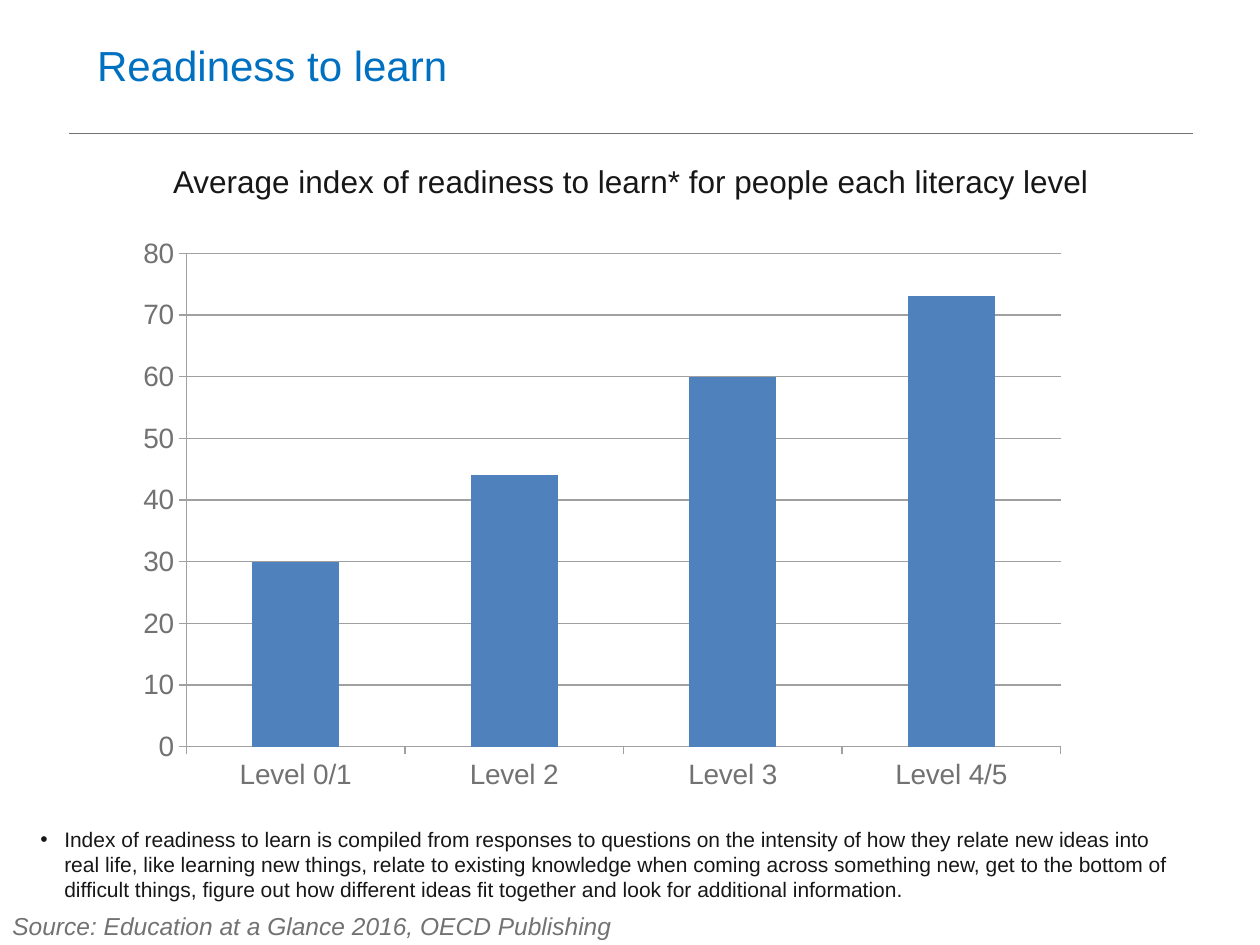
from dataclasses import dataclass

from lxml import etree
from pptx import Presentation
from pptx import util as u
from pptx.chart.data import CategoryChartData
from pptx.dml.color import RGBColor
from pptx.enum import chart as ch, shapes, text
from pptx.oxml import parse_xml
from pptx.oxml.ns import nsdecls, qn

FONT = "Arial"
GREY, DARK, BLUE, BAR, GRID = "727272", "171717", "0070C0", "4F81BD", "A0A0A0"


@dataclass
class Label:
    box: tuple[float, float, float, float]
    words: str
    size: int
    color: str
    align: text.PP_ALIGN = text.PP_ALIGN.LEFT
    italic: bool = False


TITLE = Label((0.67, 0.02, 8.82, 0.99), "Readiness to learn", 24, BLUE)
NOTE = Label(
    (0.22, 6.51, 9.27, 0.71),
    "Index of readiness to learn is compiled from responses to questions on the "
    "intensity of how they relate new ideas into\nreal life, like learning new "
    "things, relate to existing knowledge when coming across something new, get to "
    "the bottom of difficult things, figure out how different ideas fit together "
    "and look for additional information.",
    12, DARK)
CAPTIONS = [
    Label((0.83, 1.24, 8.35, 0.4),
          "Average index of readiness to learn* for people each literacy level",
          18, DARK, text.PP_ALIGN.CENTER),
    Label((0, 7.18, 6.3, 0.34), "Source: Education at a Glance 2016, OECD Publishing",
          14, GREY, italic=True),
]


def rgb(value: str) -> RGBColor:
    return RGBColor.from_string(value)


def inches(box: tuple) -> list:
    return [u.Inches(v) for v in box]


def write(sp, label: Label, anchor=text.MSO_ANCHOR.TOP):
    """Place a shape and fill it with the label's text."""
    sp.left, sp.top, sp.width, sp.height = inches(label.box)
    tf = sp.text_frame
    tf.word_wrap = True
    tf.auto_size = text.MSO_AUTO_SIZE.NONE
    tf.vertical_anchor = anchor
    p = tf.paragraphs[0]
    p.alignment = label.align
    p.space_before = u.Pt(0)
    for i, line in enumerate(label.words.split("\n")):
        if i:
            p.add_line_break()
        r = p.add_run()
        r.text = line
        r.font.name, r.font.size = FONT, u.Pt(label.size)
        r.font.italic = label.italic
        r.font.color.rgb = rgb(label.color)
    return p


def add_bullet(p, indent: float) -> None:
    pPr = p._p.get_or_add_pPr()
    pPr.set("marL", str(u.Inches(indent)))
    pPr.set("indent", str(-u.Inches(indent)))
    etree.SubElement(pPr, qn("a:buFont")).set("typeface", FONT)
    etree.SubElement(pPr, qn("a:buChar")).set("char", "•")


def add_rule(s, x1: float, x2: float, y: float) -> None:
    line = s.shapes.add_connector(shapes.MSO_CONNECTOR.STRAIGHT, *inches((x1, y, x2, y)))
    line.line.color.rgb = rgb(GREY)
    line.line.width = u.Pt(0.5)
    etree.SubElement(line._element.spPr, qn("a:effectLst"))


def set_plot_area(chart, x: float, y: float, w: float, h: float) -> None:
    area = chart._chartSpace.chart.plotArea
    for old in area.findall(qn("c:layout")):
        area.remove(old)
    area.insert(0, parse_xml(
        f'<c:layout {nsdecls("c")}><c:manualLayout><c:layoutTarget val="inner"/>'
        '<c:xMode val="edge"/><c:yMode val="edge"/>'
        f'<c:x val="{x}"/><c:y val="{y}"/><c:w val="{w}"/><c:h val="{h}"/>'
        '</c:manualLayout></c:layout>'))


def add_readiness_chart(s) -> None:
    data = CategoryChartData()
    data.categories = ["Level 0/1", "Level 2", "Level 3", "Level 4/5"]
    data.add_series("Series 1", (30, 44, 60, 73))
    chart = s.shapes.add_chart(ch.XL_CHART_TYPE.COLUMN_CLUSTERED,
                               *inches((0.37, 1.68, 9.25, 4.72)), data).chart
    chart.has_legend = chart.has_title = False
    chart.font.name, chart.font.size = FONT, u.Pt(16)
    chart.font.color.rgb = rgb(GREY)
    set_plot_area(chart, 0.12, 0.07, 0.75, 0.83)

    plot = chart.plots[0]
    plot.gap_width, plot.vary_by_categories = 150, False
    fill = plot.series[0].format.fill
    fill.solid()
    fill.fore_color.rgb = rgb(BAR)

    value = chart.value_axis
    value.minimum_scale, value.maximum_scale, value.major_unit = 0, 80, 10
    value.has_major_gridlines = True
    value.major_gridlines.format.line.color.rgb = rgb(GRID)
    value.tick_labels.number_format = "0"
    value.tick_labels.number_format_is_linked = False
    for axis in (value, chart.category_axis):
        axis.major_tick_mark = ch.XL_TICK_MARK.OUTSIDE
        axis.format.line.color.rgb = rgb(GRID)


def main() -> None:
    prs = Presentation()
    prs.slide_width, prs.slide_height = u.Inches(10), u.Inches(7.5)
    s = prs.slides.add_slide(prs.slide_layouts[1])

    # Heading and rule
    write(s.shapes.title, TITLE, text.MSO_ANCHOR.MIDDLE)
    add_rule(s, 0.55, 9.47, 1.06)

    # Chart with its caption and source
    add_readiness_chart(s)
    for label in CAPTIONS:
        write(s.shapes.add_textbox(*inches(label.box)), label)

    # Explanatory note
    add_bullet(write(s.placeholders[1], NOTE), 0.19)

    prs.save("out.pptx")


if __name__ == "__main__":
    main()
